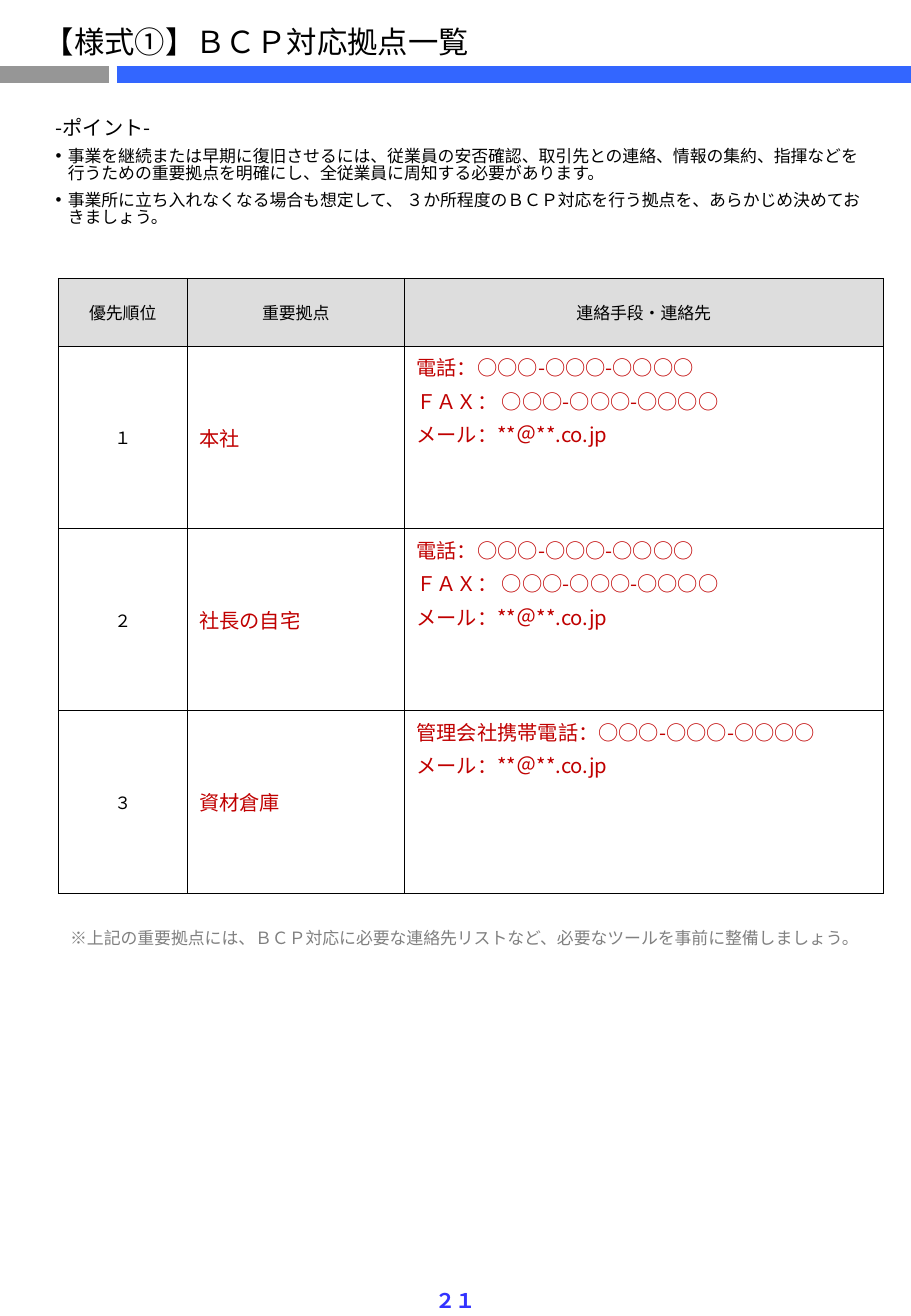
from lxml import etree
from pptx import Presentation
from pptx import util as u
from pptx.dml.color import RGBColor
from pptx.enum import shapes, text
from pptx.oxml import ns

PX = 9144
FONT = "Noto Sans CJK JP"
COLORS = {
    "ink": "000000", "example": "C00000", "note": "808080", "header": "DDDDDD",
    "number": "3333FF", "gray_bar": "969696", "blue_bar": "3366FF",
}
LEFT, CENTER = text.PP_ALIGN.LEFT, text.PP_ALIGN.CENTER
TOP, MIDDLE = text.MSO_ANCHOR.TOP, text.MSO_ANCHOR.MIDDLE
MAIL = "メール：**＠**.co.jp"
OFFICE_CONTACTS = ["電話：○○○-○○○-○○○○", "ＦＡＸ： ○○○-○○○-○○○○", MAIL]
SITES = [
    ("１", "本社", OFFICE_CONTACTS),
    ("２", "社長の自宅", OFFICE_CONTACTS),
    ("３", "資材倉庫", ["管理会社携帯電話：○○○-○○○-○○○○", MAIL]),
]
HEADINGS = ["優先順位", "重要拠点", "連絡手段・連絡先"]
POINTS = [
    "事業を継続または早期に復旧させるには、従業員の安否確認、取引先との連絡、情報の集約、指揮などを"
    "行うための重要拠点を明確にし、全従業員に周知する必要があります。",
    "事業所に立ち入れなくなる場合も想定して、 ３か所程度のＢＣＰ対応を行う拠点を、"
    "あらかじめ決めておきましょう。",
]


def px(length):
    """Turn a length in px into EMU."""
    return u.Emu(length * PX)


def rgb(name):
    """Look up a named colour."""
    return RGBColor.from_string(COLORS[name])


def add_element(parent, tag, **attributes):
    """Append a drawing element to a parent."""
    return etree.SubElement(parent, ns.qn(tag), attributes)


def write(frame, lines, size=10, color="ink", bold=False, align=LEFT, before=0):
    """Write lines as paragraphs of one format and return them."""
    paras = []
    for index, line in enumerate(lines):
        para = frame.add_paragraph() if index else frame.paragraphs[0]
        para.alignment = align
        para.space_before = u.Pt(before)
        span = para.add_run()
        span.text = line
        span.font.size = u.Pt(size)
        span.font.bold = bold
        span.font.name = FONT
        span.font.color.rgb = rgb(color)
        add_element(span.font._element, "a:ea", typeface=FONT)
        paras.append(para)
    return paras


def set_frame(frame, wrap=True, anchor=MIDDLE):
    """Set the wrapping, anchor and margins of a text frame."""
    frame.word_wrap = wrap
    frame.auto_size = text.MSO_AUTO_SIZE.NONE
    frame.vertical_anchor = anchor
    frame.margin_left = frame.margin_right = px(10)
    frame.margin_top = frame.margin_bottom = px(5)


def add_text(page, box, lines, wrap=True, anchor=MIDDLE, **style):
    """Add a text box and return its paragraphs."""
    frame = page.shapes.add_textbox(*map(px, box)).text_frame
    set_frame(frame, wrap, anchor)
    return write(frame, lines, **style)


def add_header(page, box):
    """Place the title above a gray bar and a blue bar."""
    left, top, width, height = box
    bar_y = top + height
    for start, end, color in [(0, 90, "gray_bar"), (96, width, "blue_bar")]:
        bar = page.shapes.add_connector(
            shapes.MSO_CONNECTOR.STRAIGHT,
            px(left + start), px(bar_y), px(left + end), px(bar_y))
        bar.line.color.rgb = rgb(color)
        bar.line.width = u.Pt(10)
        add_element(bar._element.spPr, "a:effectLst")
    title = page.shapes.title
    title.left, title.top, title.width, title.height = map(
        px, (left + 26, top + 14, 400, 40))
    set_frame(title.text_frame, wrap=False)
    write(title.text_frame, ["【様式①】ＢＣＰ対応拠点一覧"], size=18)


def add_points(page, box):
    """Place the heading and its bulleted points."""
    paras = add_text(page, box, ["-ポイント-"] + POINTS, anchor=TOP)
    paras[0].runs[0].font.size = u.Pt(12)
    for index, para in enumerate(paras):
        para.line_spacing = 0.83
        para.space_after = u.Pt(6)
        properties = para._p.get_or_add_pPr()
        properties.set("marL", str(px(10)))
        properties.set("indent", str(px(-10)))
        if index:
            add_element(properties, "a:buFont", typeface="Arial")
            add_element(properties, "a:buChar", char="•")


def add_borders(cell):
    """Draw thin black lines on all sides of a cell."""
    properties = cell._tc.get_or_add_tcPr()
    for index, side in enumerate("LRTB"):
        line = etree.Element(ns.qn(f"a:ln{side}"), w=str(u.Pt(0.5)))
        fill = add_element(line, "a:solidFill")
        add_element(fill, "a:srgbClr", val=COLORS["ink"])
        properties.insert(index, line)


def fill_cell(cell, lines, anchor=MIDDLE, **style):
    """Write and format one table cell."""
    cell.vertical_anchor = anchor
    cell.margin_left = cell.margin_right = px(10)
    cell.margin_top = cell.margin_bottom = px(5)
    cell.fill.background()
    add_borders(cell)
    write(cell.text_frame, lines, **style)


def add_sites(page, box):
    """Place the table of sites by priority."""
    table = page.shapes.add_table(len(SITES) + 1, 3, *map(px, box)).table
    table.first_row = table.horz_banding = False
    for column, width in zip(table.columns, (106, 179, box[2] - 285)):
        column.width = px(width)
    for index, row in enumerate(table.rows):
        row.height = px(150 if index else 56)
    label = dict(align=CENTER, before=2)
    example = dict(size=12, color="example", before=2.4)
    for column, heading in enumerate(HEADINGS):
        cell = table.cell(0, column)
        fill_cell(cell, [heading], **label)
        cell.fill.solid()
        cell.fill.fore_color.rgb = rgb("header")
    for row, (rank, site, contacts) in enumerate(SITES, 1):
        fill_cell(table.cell(row, 0), [rank], **label)
        fill_cell(table.cell(row, 1), [site], **example)
        fill_cell(table.cell(row, 2), contacts, anchor=TOP, **example)


def main():
    """Build and save the one-page deck."""
    deck = Presentation()
    deck.slide_width, deck.slide_height = px(750), px(1083)
    page = deck.slides.add_slide(deck.slide_layouts[5])
    add_header(page, (0, 0, 750, 61))
    add_points(page, (36, 93, 689, 114))
    add_sites(page, (48, 229, 679, 506))
    add_text(page, (48, 758, 677, 27), [
        "※上記の重要拠点には、ＢＣＰ対応に必要な連絡先リストなど、必要なツールを事前に整備しましょう。"
    ], color="note")
    add_text(page, (348, 1055, 54, 31), ["２１"], wrap=False, size=12,
             color="number", bold=True, align=CENTER)
    deck.save("out.pptx")


if __name__ == "__main__":
    main()
